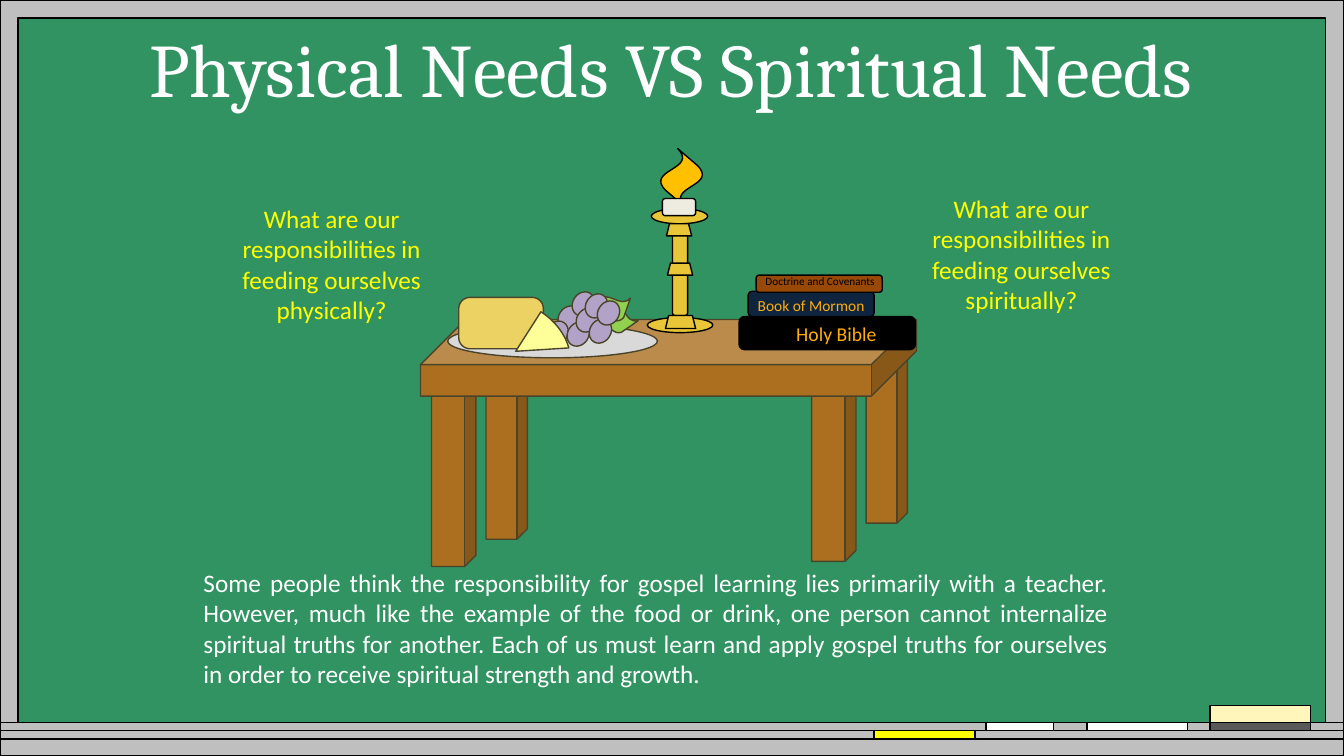
"""Build the slide comparing physical and spiritual needs on a chalkboard."""
import pptx
import pptx.util
import pptx.dml.color
import pptx.enum.shapes
import pptx.enum.text

EMU_PER_PX = 9144
WIDTH, HEIGHT = 1333, 750
KIND = pptx.enum.shapes.MSO_SHAPE
ALIGN = pptx.enum.text.PP_ALIGN

COLORS = {
    "board": "319362", "frame": "BFBFBF", "black": "000000", "white": "FFFFFF",
    "eraser": "FEF6BA", "felt": "595959", "yellow": "FFFF00", "wood": "AB6F1F",
    "outline": "4A452A", "plate": "D9D9D9", "leaf": "92D050", "grape": "B3A2C7",
    "gold": "E8C638", "flame": "FFC000", "wax": "EEECE1", "bread": "ECD262",
    "cheese": "FFFF99", "navy": "0F243E", "leather": "984807", "lettering": "FFAD09",
}

BOARD = [
    (KIND.RECTANGLE, (0, 0, WIDTH, HEIGHT), "board"),
    (KIND.FRAME, (0, 0, WIDTH, HEIGHT), "frame", (0.024,)),
    (KIND.RECTANGLE, (0, 733, WIDTH, 17), "frame"),
    (KIND.RECTANGLE, (0, 725, WIDTH, 8), "frame"),
    (KIND.RECTANGLE, (0, 717, WIDTH, 8), "frame"),
    (KIND.RECTANGLE, (1200, 700, 100, 17), "eraser"),
    (KIND.RECTANGLE, (1200, 717, 100, 8), "felt"),
    (KIND.RECTANGLE, (1078, 717, 100, 8), "white"),
    (KIND.RECTANGLE, (978, 717, 67, 8), "white"),
    (KIND.RECTANGLE, (867, 725, 100, 8), "yellow"),
]
TABLE = [
    (KIND.CUBE, (428, 371, 44, 191), "wood"),
    (KIND.CUBE, (805, 366, 44, 191), "wood"),
    (KIND.CUBE, (482, 360, 41, 175), "wood"),
    (KIND.CUBE, (859, 344, 41, 175), "wood"),
    (KIND.CUBE, (417, 317, 492, 76), "wood", (0.59,)),
    (KIND.OVAL, (444, 322, 208, 33), "plate"),
    (KIND.WAVE, (591, 303, 40, 25), "leaf", (0.125, -0.1), 32.1),
    (KIND.WAVE, (586, 294, 40, 25), "leaf", (0.125, -0.1), 356),
]
GRAPE_CORNERS = [(554, 303), (542, 318), (563, 319), (568, 289),
                 (572, 305), (585, 316), (581, 291), (593, 298)]
GRAPES = [(KIND.OVAL, (left, top, 21, 25), "grape", (), 32.1) for left, top in GRAPE_CORNERS]
CANDLE = [
    (KIND.OVAL, (642, 315, 65, 15), "gold"),
    (KIND.ROUNDED_RECTANGLE, (667, 217, 15, 96), "gold"),
    (KIND.WAVE, (649, 157, 54, 39), "flame", (0.2, -0.1), 285.7),
    (KIND.OVAL, (646, 207, 56, 15), "gold"),
    (KIND.ROUNDED_RECTANGLE, (657, 197, 33, 17), "wax"),
    (KIND.TRAPEZOID, (662, 261, 25, 12), "gold"),
    (KIND.TRAPEZOID, (660, 313, 30, 13), "gold"),
    (KIND.TRAPEZOID, (661, 222, 25, 12), "gold"),
]
FOOD = [
    (KIND.ROUNDED_RECTANGLE, (455, 295, 84, 51), "bread", (0.218,)),
    (KIND.PIE, (465, 291, 93, 115), "cheese", (0, 32.259), 302.6),
]
BOOKS = [
    (KIND.ROUNDED_RECTANGLE, (733, 314, 175, 33), "black"),
    (KIND.ROUNDED_RECTANGLE, (742, 289, 125, 25), "navy"),
    (KIND.ROUNDED_RECTANGLE, (750, 273, 125, 17), "leather"),
]
LAYERS = [(BOARD, "black"), (TABLE + GRAPES, "outline"), (CANDLE, "black"),
          (FOOD, "outline"), (BOOKS, "black")]

QUESTION = "What are our responsibilities in feeding ourselves {}?"
MESSAGE = (
    "Some people think the responsibility for gospel learning lies primarily with a teacher. "
    "However, much like the example of the food or drink, one person cannot internalize "
    "spiritual truths for another. Each of us must learn and apply gospel truths for ourselves "
    "in order to receive spiritual strength and growth."
)
TEXTS = [
    ("Physical Needs VS Spiritual Needs", (20, 17, 1291, 101), 54, "white", "Cambria", ALIGN.CENTER),
    (QUESTION.format("physically"), (208, 197, 242, 131), 18, "yellow", "Calibri", ALIGN.CENTER),
    (QUESTION.format("spiritually"), (892, 187, 242, 131), 18, "yellow", "Calibri", ALIGN.CENTER),
    ("Holy Bible", (742, 314, 175, 34), 14, "lettering", "Calibri", ALIGN.CENTER),
    ("Book of Mormon", (717, 289, 175, 29), 11, "lettering", "Calibri", ALIGN.CENTER),
    ("Doctrine and Covenants", (726, 267, 175, 24), 8, "black", "Calibri", ALIGN.CENTER),
    (MESSAGE, (192, 558, 917, 131), 18, "white", "Calibri", ALIGN.JUSTIFY),
]


def color(name):
    return pptx.dml.color.RGBColor.from_string(COLORS[name])


def emu(box):
    return [length * EMU_PER_PX for length in box]


def draw_shape(slide, outline, kind, box, fill, adjustments=(), rotation=0):
    shape = slide.shapes.add_shape(kind, *emu(box))
    shape.shadow.inherit = False
    shape.fill.solid()
    shape.fill.fore_color.rgb = color(fill)
    shape.line.color.rgb = color(outline)
    shape.line.width = pptx.util.Pt(1)
    shape.rotation = rotation
    for index, value in enumerate(adjustments):
        shape.adjustments[index] = value


def write_text(slide, text, box, size, ink, font, alignment):
    frame = slide.shapes.add_textbox(*emu(box)).text_frame
    frame.word_wrap = True
    frame.auto_size = pptx.enum.text.MSO_AUTO_SIZE.SHAPE_TO_FIT_TEXT
    paragraph = frame.paragraphs[0]
    paragraph.alignment = alignment
    run = paragraph.add_run()
    run.text = text
    run.font.size = pptx.util.Pt(size)
    run.font.name = font
    run.font.color.rgb = color(ink)


def main():
    presentation = pptx.Presentation()
    presentation.slide_width, presentation.slide_height = emu((WIDTH, HEIGHT))
    slide = presentation.slides.add_slide(presentation.slide_layouts[6])
    for parts, outline in LAYERS:
        for part in parts:
            draw_shape(slide, outline, *part)
    for text in TEXTS:
        write_text(slide, *text)
    presentation.save("out.pptx")


if __name__ == "__main__":
    main()
